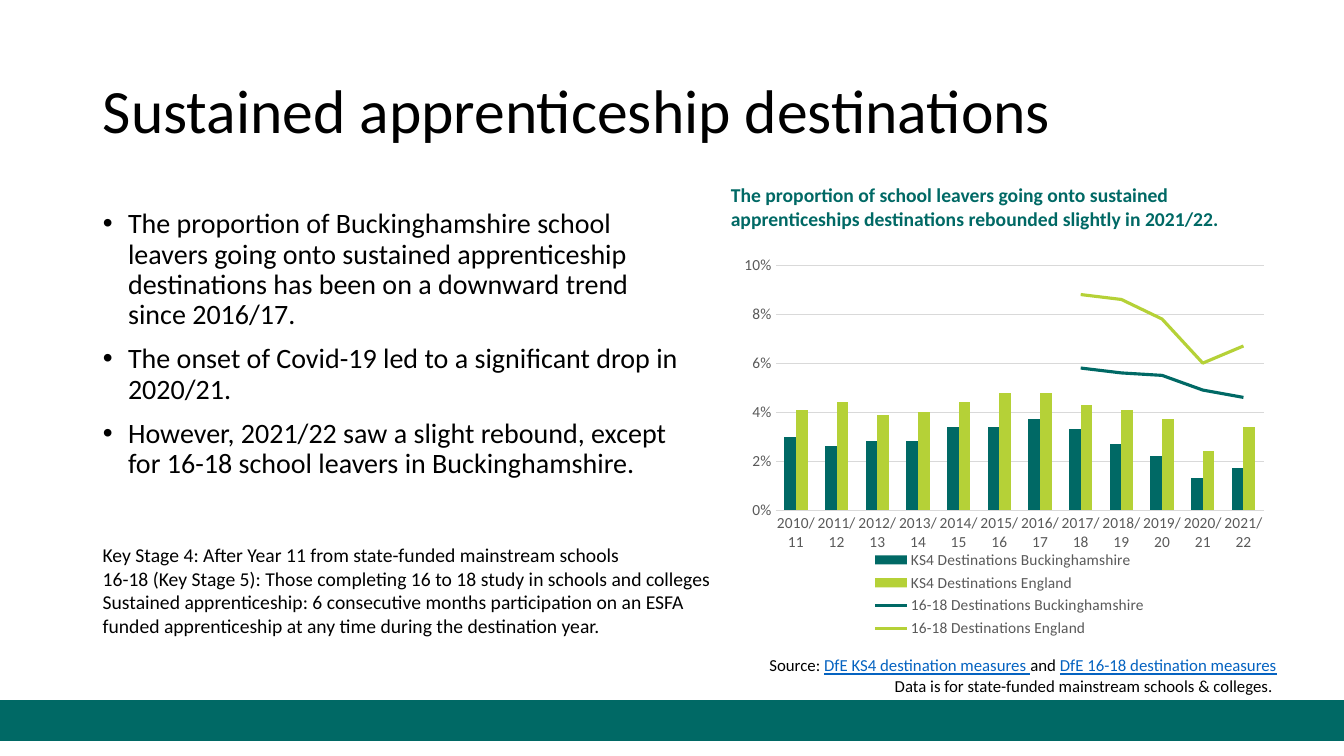
from dataclasses import dataclass

from lxml import etree
from pptx import Presentation
from pptx.chart.data import CategoryChartData
from pptx.dml.color import RGBColor
from pptx.enum.chart import XL_CHART_TYPE, XL_LEGEND_POSITION, XL_MARKER_STYLE, XL_TICK_MARK
from pptx.enum.shapes import MSO_SHAPE
from pptx.enum.text import MSO_ANCHOR, MSO_AUTO_SIZE, PP_ALIGN
from pptx.oxml import parse_xml
from pptx.oxml.ns import qn
from pptx.util import Inches, Pt

FONT = "Calibri"
TEAL, LIME, BLACK = "006965", "B5D137", "000000"
GREY, GRID, LINK = "595959", "D9D9D9", "0563C1"
C_NS = 'xmlns:c="http://schemas.openxmlformats.org/drawingml/2006/chart"'


@dataclass
class Series:
    name: str
    percents: list
    color: str
    is_line: bool = False


@dataclass
class Note:
    box: tuple
    paragraphs: list  # each paragraph is a list of (text, colour)
    size: int
    bold: bool = False
    align: PP_ALIGN = PP_ALIGN.LEFT


YEARS = [f"{year}/{year % 100 + 1}" for year in range(2010, 2022)]
SERIES = [
    Series("KS4 Destinations Buckinghamshire",
           [3, 2.6, 2.8, 2.8, 3.4, 3.4, 3.7, 3.3, 2.7, 2.2, 1.3, 1.7], TEAL),
    Series("KS4 Destinations England",
           [4.1, 4.4, 3.9, 4, 4.4, 4.8, 4.8, 4.3, 4.1, 3.7, 2.4, 3.4], LIME),
    Series("16-18 Destinations Buckinghamshire",
           [None] * 7 + [5.8, 5.6, 5.5, 4.9, 4.6], TEAL, True),
    Series("16-18 Destinations England",
           [None] * 7 + [8.8, 8.6, 7.8, 6, 6.7], LIME, True),
]
BULLETS = [
    "The proportion of Buckinghamshire school leavers going onto sustained "
    "apprenticeship destinations has been on a downward trend since 2016/17.",
    "The onset of Covid-19 led to a significant drop in 2020/21.",
    "However, 2021/22 saw a slight rebound, except for 16-18 school leavers in Buckinghamshire.",
]
NOTES = [
    Note((7.37, 6.45, 5.39, 0.5), [
        [("Source: ", BLACK), ("DfE KS4 destination measures ", LINK),
         ("and ", BLACK), ("DfE 16-18 destination measures", LINK)],
        [("Data is for state-funded mainstream schools & colleges. ", BLACK)],
    ], 12, align=PP_ALIGN.RIGHT),
    Note((7.15, 1.77, 5.48, 0.57), [
        [("The proportion of school leavers going onto sustained apprenticeships "
          "destinations rebounded slightly in 2021/22.", TEAL)],
    ], 14, bold=True),
    Note((0.92, 5.34, 6.23, 1.04), [
        [("Key Stage 4: After Year 11 from state-funded mainstream schools", BLACK)],
        [("16-18 (Key Stage 5): Those completing 16 to 18 study in schools and colleges", BLACK)],
        [("Sustained apprenticeship: 6 consecutive months participation on an ESFA funded "
          "apprenticeship at any time during the destination year.", BLACK)],
    ], 14),
]


def rgb(color: str) -> RGBColor:
    return RGBColor.from_string(color)


def inches(box: tuple) -> list:
    return [Inches(v) for v in box]


def set_font(font, size: float, color: str, bold: bool = False) -> None:
    font.name, font.size, font.bold = FONT, Pt(size), bold
    font.color.rgb = rgb(color)


def fill_placeholder(sp, box: tuple, text: str, size: int, anchor: MSO_ANCHOR) -> None:
    sp.left, sp.top, sp.width, sp.height = inches(box)
    tf = sp.text_frame
    tf.text = text
    tf.auto_size = MSO_AUTO_SIZE.NONE
    tf.vertical_anchor = anchor
    for p in tf.paragraphs:
        p.alignment = PP_ALIGN.LEFT
        p.line_spacing = 0.9
        for r in p.runs:
            set_font(r.font, size, BLACK)


def add_bullets(sp) -> None:
    for p in sp.text_frame.paragraphs:
        p.space_before = Pt(10)
        pPr = p._p.get_or_add_pPr()
        pPr.set("marL", str(Inches(0.25)))
        pPr.set("indent", str(-Inches(0.25)))
        etree.SubElement(pPr, qn("a:buFont")).set("typeface", "Arial")
        etree.SubElement(pPr, qn("a:buChar")).set("char", "•")


def add_note(s, note: Note) -> None:
    tf = s.shapes.add_textbox(*inches(note.box)).text_frame
    tf.word_wrap = True
    tf.auto_size = MSO_AUTO_SIZE.SHAPE_TO_FIT_TEXT
    for i, pieces in enumerate(note.paragraphs):
        p = tf.paragraphs[0] if i == 0 else tf.add_paragraph()
        p.alignment = note.align
        for text, color in pieces:
            r = p.add_run()
            r.text = text
            set_font(r.font, note.size, color, note.bold)
            r.font.underline = color == LINK


def move_lines_to_second_axis(chart) -> None:
    """Turn the line series of the column chart into a line plot on hidden axes."""
    plot_area = chart.element.find(".//" + qn("c:plotArea"))
    bars = plot_area.find(qn("c:barChart"))
    lines = parse_xml(
        f'<c:lineChart {C_NS}><c:grouping val="standard"/><c:varyColors val="0"/>'
        '<c:marker val="1"/><c:axId val="5001"/><c:axId val="5002"/></c:lineChart>')
    line_marker = lines.find(qn("c:marker"))
    for ser, item in zip(bars.findall(qn("c:ser")), SERIES):
        if item.is_line:
            for invert in ser.findall(qn("c:invertIfNegative")):
                ser.remove(invert)
            line_marker.addprevious(ser)
    bars.addnext(lines)

    def hidden_axis(tag: str, axis_id: int, cross_id: int, limits: str, pos: str, rest: str):
        return parse_xml(
            f'<c:{tag} {C_NS}><c:axId val="{axis_id}"/>'
            f'<c:scaling><c:orientation val="minMax"/>{limits}</c:scaling>'
            f'<c:delete val="1"/><c:axPos val="{pos}"/>'
            f'<c:crossAx val="{cross_id}"/>{rest}</c:{tag}>')

    value_axis = plot_area.find(qn("c:valAx"))
    value_axis.addnext(hidden_axis("catAx", 5001, 5002, "", "b", '<c:crosses val="autoZero"/>'))
    value_axis.addnext(hidden_axis(
        "valAx", 5002, 5001, '<c:max val="0.1"/><c:min val="0"/>', "r",
        '<c:crosses val="max"/><c:majorUnit val="0.02"/>'))

    for layout in plot_area.findall(qn("c:layout")):
        plot_area.remove(layout)
    plot_area.insert(0, parse_xml(
        f'<c:layout {C_NS}><c:manualLayout><c:layoutTarget val="inner"/>'
        '<c:xMode val="edge"/><c:yMode val="edge"/><c:x val="0.077"/><c:y val="0.063"/>'
        '<c:w val="0.882"/><c:h val="0.609"/></c:manualLayout></c:layout>'))


def add_destinations_chart(s) -> None:
    data = CategoryChartData(number_format="0%")
    data.categories = YEARS
    for item in SERIES:
        data.add_series(item.name, [v if v is None else round(v / 100, 3) for v in item.percents])
    chart = s.shapes.add_chart(
        XL_CHART_TYPE.COLUMN_CLUSTERED, *inches((7.27, 2.38, 5.49, 3.99)), data).chart
    set_font(chart.font, 10, BLACK)
    chart.has_title = False
    chart.has_legend = True
    chart.legend.position = XL_LEGEND_POSITION.BOTTOM
    chart.legend.include_in_layout = False
    set_font(chart.legend.font, 11, GREY)

    value_axis, category_axis = chart.value_axis, chart.category_axis
    for axis in (value_axis, category_axis):
        axis.major_tick_mark = axis.minor_tick_mark = XL_TICK_MARK.NONE
        set_font(axis.tick_labels.font, 11, GREY)
    value_axis.minimum_scale, value_axis.maximum_scale, value_axis.major_unit = 0, 0.1, 0.02
    value_axis.tick_labels.number_format = "0%"
    value_axis.tick_labels.number_format_is_linked = False
    value_axis.format.line.fill.background()
    for line in (value_axis.major_gridlines.format.line, category_axis.format.line):
        line.color.rgb, line.width = rgb(GRID), Pt(0.75)

    plot = chart.plots[0]
    plot.gap_width, plot.overlap, plot.vary_by_categories = 150, 0, False
    move_lines_to_second_axis(chart)
    for ser, item in zip(chart.series, SERIES):
        if item.is_line:
            ser.format.line.color.rgb, ser.format.line.width = rgb(item.color), Pt(2.25)
            ser.marker.style = XL_MARKER_STYLE.NONE
            ser.smooth = False
        else:
            ser.format.fill.solid()
            ser.format.fill.fore_color.rgb = rgb(item.color)


def main() -> None:
    prs = Presentation()
    prs.slide_width, prs.slide_height = Inches(13.33), Inches(7.5)
    s = prs.slides.add_slide(prs.slide_layouts[1])

    band = s.shapes.add_shape(MSO_SHAPE.RECTANGLE, *inches((0, 6.95, 13.33, 0.4)))
    band.shadow.inherit = False
    band.fill.solid()
    band.fill.fore_color.rgb = band.line.color.rgb = rgb(TEAL)
    band.line.width = Pt(1)

    title, body = s.shapes.title, s.placeholders[1]
    fill_placeholder(title, (0.92, 0.4, 11.5, 1.45), "Sustained apprenticeship destinations",
                     44, MSO_ANCHOR.MIDDLE)
    fill_placeholder(body, (0.92, 2.03, 5.94, 3.99), "\n".join(BULLETS), 20, MSO_ANCHOR.TOP)
    add_bullets(body)
    add_destinations_chart(s)
    for note in NOTES:
        add_note(s, note)
    prs.save("out.pptx")


if __name__ == "__main__":
    main()
